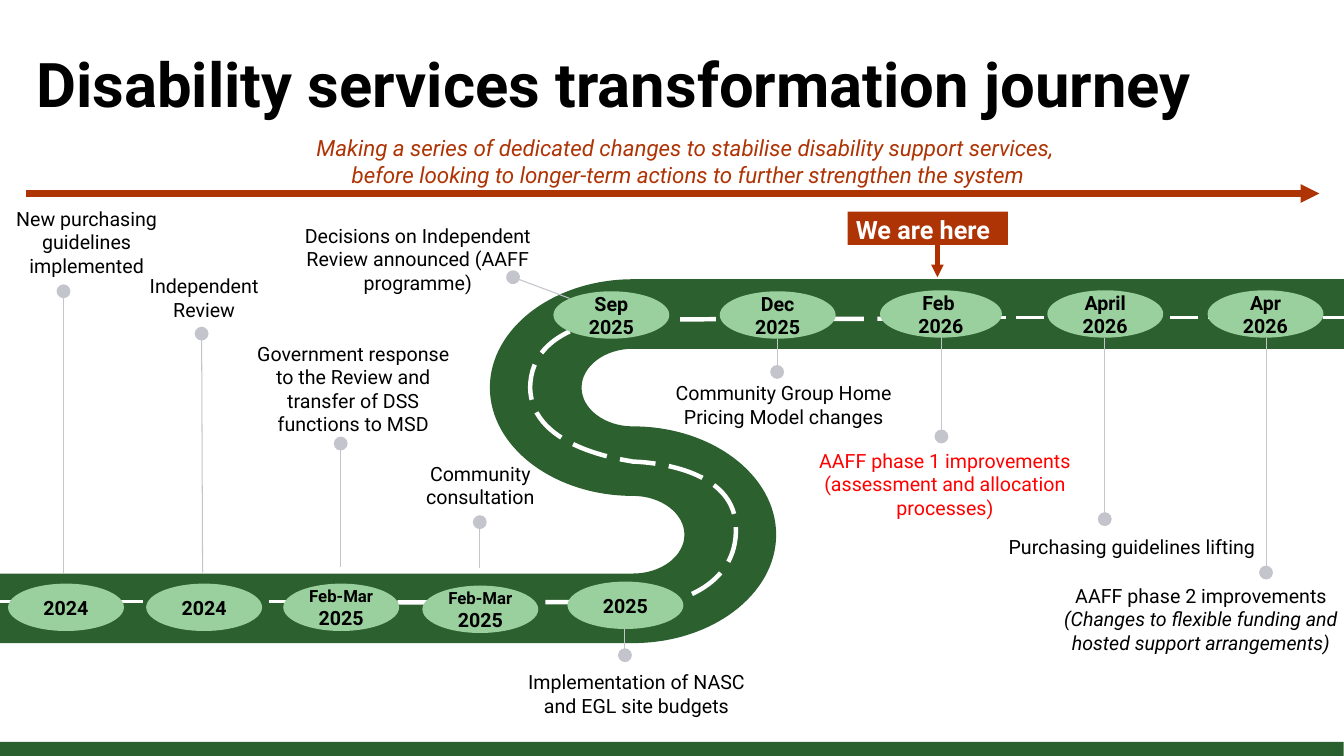
from dataclasses import dataclass

from lxml import etree
from pptx import Presentation
from pptx.dml.color import RGBColor
from pptx.enum.dml import MSO_LINE
from pptx.enum.shapes import MSO_CONNECTOR, MSO_SHAPE
from pptx.enum.text import MSO_ANCHOR, MSO_AUTO_SIZE, PP_ALIGN
from pptx.oxml.ns import qn
from pptx.util import Emu, Pt

PX = 9144
STRAIGHT = MSO_CONNECTOR.STRAIGHT
RECTANGLE, ELLIPSE = MSO_SHAPE.RECTANGLE, MSO_SHAPE.OVAL
LONG_DASH = MSO_LINE.LONG_DASH
TOP, MIDDLE = MSO_ANCHOR.TOP, MSO_ANCHOR.MIDDLE
LEFT, CENTER = PP_ALIGN.LEFT, PP_ALIGN.CENTER
FIXED, GROW = MSO_AUTO_SIZE.NONE, MSO_AUTO_SIZE.SHAPE_TO_FIT_TEXT
ROUNDNESS = 0.55


@dataclass(frozen=True)
class Theme:
    font: str = "Roboto"
    footer: str = "2A602F"
    road: str = "2C602F"
    marking: str = "FFFFFF"
    stop: str = "9AD09D"
    leader: str = "C4C4CD"
    accent: str = "AF3405"
    pointer: str = "AF3101"
    ink: str = "000000"
    alert: str = "FF0000"
    title_size: int = 44
    callout_size: int = 18
    subtitle_size: int = 16
    text_size: int = 14
    small_size: int = 12


THEME = Theme()


def style(size, color=THEME.ink, bold=False, italic=False):
    return color, {"name": THEME.font, "size": Pt(size), "bold": bold, "italic": italic}


TITLE = style(THEME.title_size, bold=True)
SUBTITLE = style(THEME.subtitle_size, THEME.accent, italic=True)
CALLOUT = style(THEME.callout_size, THEME.marking, bold=True)
DATE = style(THEME.text_size, bold=True)
SMALL_DATE = style(THEME.small_size, bold=True)
LABEL = style(THEME.text_size)
LABEL_ITALIC = style(THEME.text_size, italic=True)
LABEL_ALERT = style(THEME.text_size, THEME.alert)

FEB_MAR = [[("Feb-Mar ", SMALL_DATE), ("2025", DATE)]]

STOPS = [
    ((8, 579, 115, 47), [[("2024", DATE)]], (55, -11), (55, -290), (1, -377, 154, 74),
     [[("New purchasing guidelines implemented", LABEL)]]),
    ((145, 579, 115, 47), [[("2024", DATE)]], (56, -11), (55, -248), (-13, -310, 141, 50),
     [[("Independent Review", LABEL)]]),
    ((281, 579, 115, 47), FEB_MAR, (57, -16), (57, -139), (-30, -243, 199, 97),
     [[("Government response to the Review and transfer of DSS functions to MSD", LABEL)]]),
    ((419, 581, 115, 47), FEB_MAR, (57, -17), (57, -63), (-42, -126, 199, 50),
     [[("Community consultation", LABEL)]]),
    ((563, 577, 115, 47), [[("2025", DATE)]], (57, 47), (57, 73), (-54, 85, 245, 50),
     [[("Implementation of NASC and EGL site budgets", LABEL)]]),
    ((549, 289, 115, 47), [[("Sep 2025", DATE)]], (16, 7), (-40, -14), (-257, -70, 245, 74),
     [[("Decisions on Independent Review announced (AAFF programme)", LABEL)]]),
    ((714, 289, 115, 47), [[("Dec 2025", DATE)]], (57, 47), (57, 80), (-71, 86, 269, 50),
     [[("Community Group Home Pricing Model changes", LABEL)]]),
    ((873, 288, 121, 47), [[("Feb ", DATE)], [("2026", DATE)]], (61, 36), (61, 145),
     (-94, 154, 317, 74),
     [[("AAFF phase 1 improvements", LABEL_ALERT)],
      [("(assessment and allocation processes)", LABEL_ALERT)]]),
    ((1039, 288, 115, 47), [[("April 2026", DATE)]], (57, 47), (57, 227), (-44, 240, 256, 26),
     [[("Purchasing guidelines lifting", LABEL)]]),
    ((1198, 288, 115, 47), [[("Apr 2026", DATE)]], (58, 47), (58, 280), (-146, 288, 279, 74),
     [[("AAFF phase 2 improvements", LABEL)],
      [("(Changes to flexible funding and hosted support arrangements)", LABEL_ITALIC)]]),
]


def emu(lengths):
    return [Emu(round(length * PX)) for length in lengths]


def inside(box, place):
    return (box[0] + place[0], box[1] + place[1], *place[2:])


def write(shape, paragraphs, align=CENTER, anchor=TOP, margins=(0, 3, 0, 0), fit=FIXED):
    frame = shape.text_frame
    left, top, right, bottom = emu(margins)
    values = {"margin_left": left, "margin_top": top, "margin_right": right,
              "margin_bottom": bottom, "word_wrap": True, "auto_size": fit,
              "vertical_anchor": anchor}
    for name, value in values.items():
        setattr(frame, name, value)
    for index, spans in enumerate(paragraphs):
        para = frame.add_paragraph() if index else frame.paragraphs[0]
        para.alignment = align
        for text, (color, values) in spans:
            span = para.add_run()
            span.text = text
            span.font.color.rgb = RGBColor.from_string(color)
            for name, value in values.items():
                setattr(span.font, name, value)


def add_text(page, box, paragraphs, align=CENTER):
    write(page.shapes.add_textbox(*emu(box)), paragraphs, align, fit=GROW)


def add_block(page, kind, box, color):
    shape = page.shapes.add_shape(kind, *emu(box))
    paint(shape, color)
    return shape


def paint(shape, color):
    shape.shadow.inherit = False
    shape.fill.solid()
    shape.fill.fore_color.rgb = RGBColor.from_string(color)
    shape.line.fill.background()


def stroke(line, color, width, dash=None):
    line.color.rgb = RGBColor.from_string(color)
    line.width = Pt(width)
    if dash:
        line.dash_style = dash


def add_line(page, start, end, color, width, dash=None, tip=None, tip_size="med"):
    connector = page.shapes.add_connector(STRAIGHT, *emu(start + end))
    stroke(connector.line, color, width, dash)
    if tip:
        etree.SubElement(connector.line._get_or_add_ln(), qn("a:tailEnd"),
                         type=tip, w=tip_size, len=tip_size)
    etree.SubElement(connector._element.spPr, qn("a:effectLst"))


def add_outline(page, box, start, segments, close):
    points = [emu(inside(box, point)) for segment in segments for point in segment]
    builder = page.shapes.build_freeform(*emu(inside(box, start)), scale=1.0)
    builder.add_line_segments(points, close=close)
    shape = builder.convert_to_shape()
    steps = iter(list(shape._element.iter(qn("a:lnTo"))))
    for segment in segments:
        group = [next(steps) for _ in segment]
        if len(group) == 3:
            curve = etree.Element(qn("a:cubicBezTo"))
            group[0].addprevious(curve)
            for step in group:
                curve.append(step[0])
                step.getparent().remove(step)
    return shape


def bend(x, start, end, reach):
    half = (end - start) / 2
    middle, side = start + half, x + reach
    near, rise = x + ROUNDNESS * reach, ROUNDNESS * half
    return [((near, start), (side, middle - rise), (side, middle)),
            ((side, middle + rise), (near, end), (x, end))]


def draw_footer(page, box):
    add_block(page, RECTANGLE, box, THEME.footer)


def draw_header(page, box):
    title = page.shapes.title
    title.left, title.top, title.width, title.height = emu(inside(box, (0, 0, 1282, 71)))
    write(title, [[("Disability services transformation journey", TITLE)]],
          align=LEFT, margins=(10, 5, 10, 5))
    add_text(page, inside(box, (37, 89, 1239, 57)), [
        [("Making a series of dedicated changes to stabilise disability support services, ",
          SUBTITLE)],
        [("before looking to longer‑term actions to further strengthen the system", SUBTITLE)]])
    add_line(page, inside(box, (0, 151)), inside(box, (1283, 151)), THEME.accent, 4.5,
             tip="triangle")


def draw_road(page, box):
    middle, right = 628, 1465
    edge = [((right, 69),), ((middle, 69),), *bend(middle, 69, 146, -51),
            *bend(middle, 146, 361, 142), ((0, 361),), ((0, 292),), ((middle, 292),),
            *bend(middle, 292, 215, 51), *bend(middle, 215, 0, -142)]
    paint(add_outline(page, box, (right, 0), edge, True), THEME.road)

    marking = [((614, 40),),
               ((612, 40), (527, 44), (526, 107)),
               ((526, 170), (627, 180), (628, 181)),
               ((628, 181), (728, 182), (730, 245)),
               ((733, 308), (663, 320), (664, 320)),
               ((307, 321),)]
    lane = add_outline(page, box, (955, 39), marking, False)
    lane.shadow.inherit = False
    lane.fill.background()
    stroke(lane.line, THEME.marking, 3.2, LONG_DASH)
    for start, end, level in ((970, 1335, 38), (0, 324, 320)):
        add_line(page, inside(box, (start, level)), inside(box, (end, level)),
                 THEME.marking, 2.5, LONG_DASH)


def draw_stop(page, box, date, start, end, label_box, label):
    add_line(page, inside(box, start), inside(box, end), THEME.leader, 0.75,
             tip="oval", tip_size="lg")
    add_text(page, inside(box, label_box), label)
    write(add_block(page, ELLIPSE, box, THEME.stop), date, anchor=MIDDLE, margins=(7, 4, 7, 4))


def draw_callout(page, box):
    add_block(page, RECTANGLE, box, THEME.accent)
    add_text(page, inside(box, (8, 0, 182, 33)), [[("We are here", CALLOUT)]], LEFT)
    add_line(page, inside(box, (89, 33)), inside(box, (89, 65)), THEME.pointer, 3,
             tip="triangle")


def main():
    deck = Presentation()
    deck.slide_width, deck.slide_height = Emu(12192000), Emu(6858000)
    page = deck.slides.add_slide(deck.slide_layouts[5])
    draw_footer(page, (0, 736, 1333, 14))
    draw_header(page, (26, 41, 1283, 151))
    draw_road(page, (0, 277, 1465, 361))
    for stop in STOPS:
        draw_stop(page, *stop)
    draw_callout(page, (841, 210, 159, 33))
    deck.save("out.pptx")


if __name__ == "__main__":
    main()
